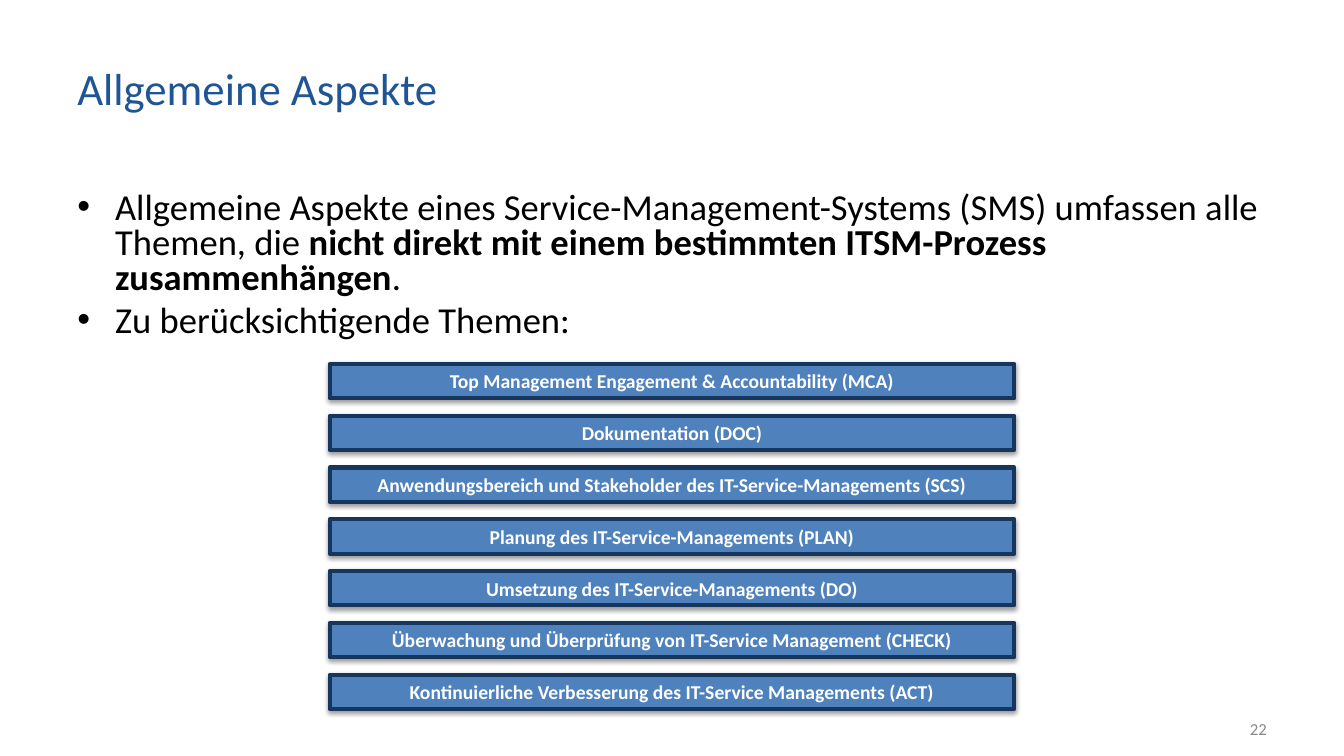
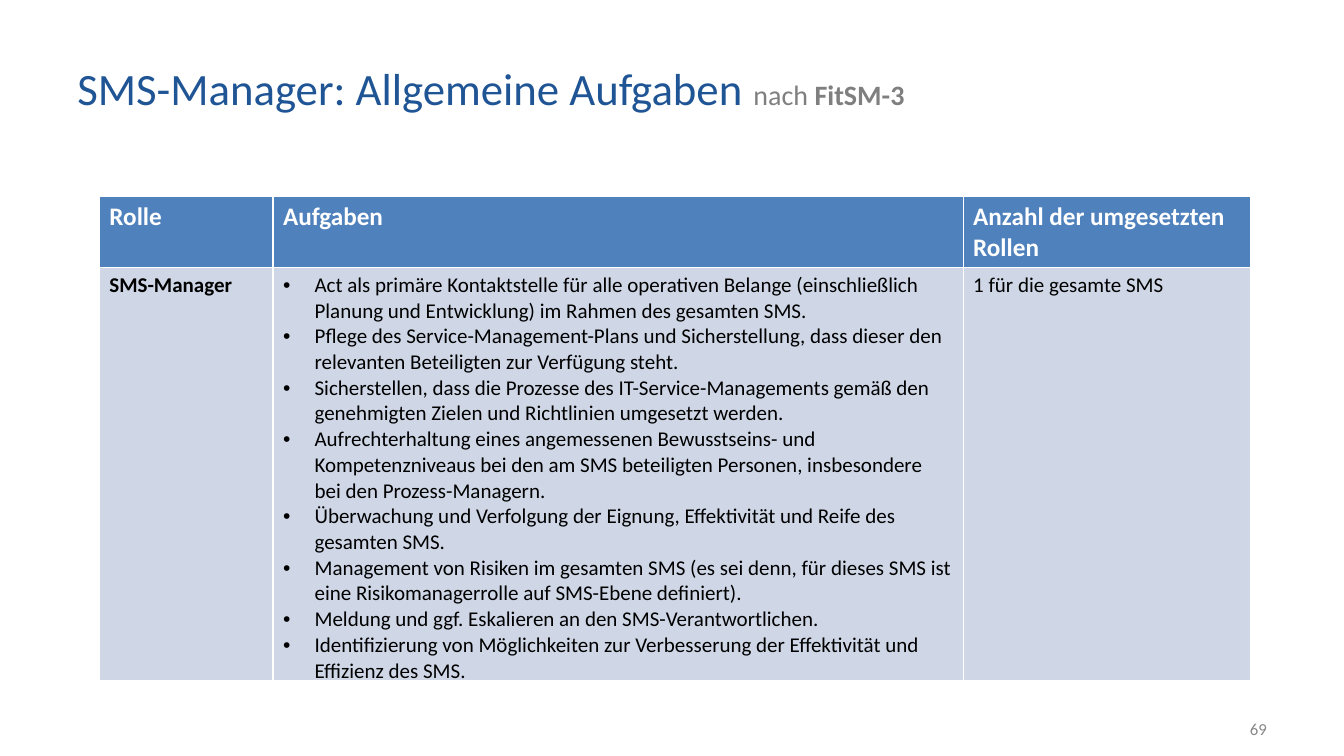
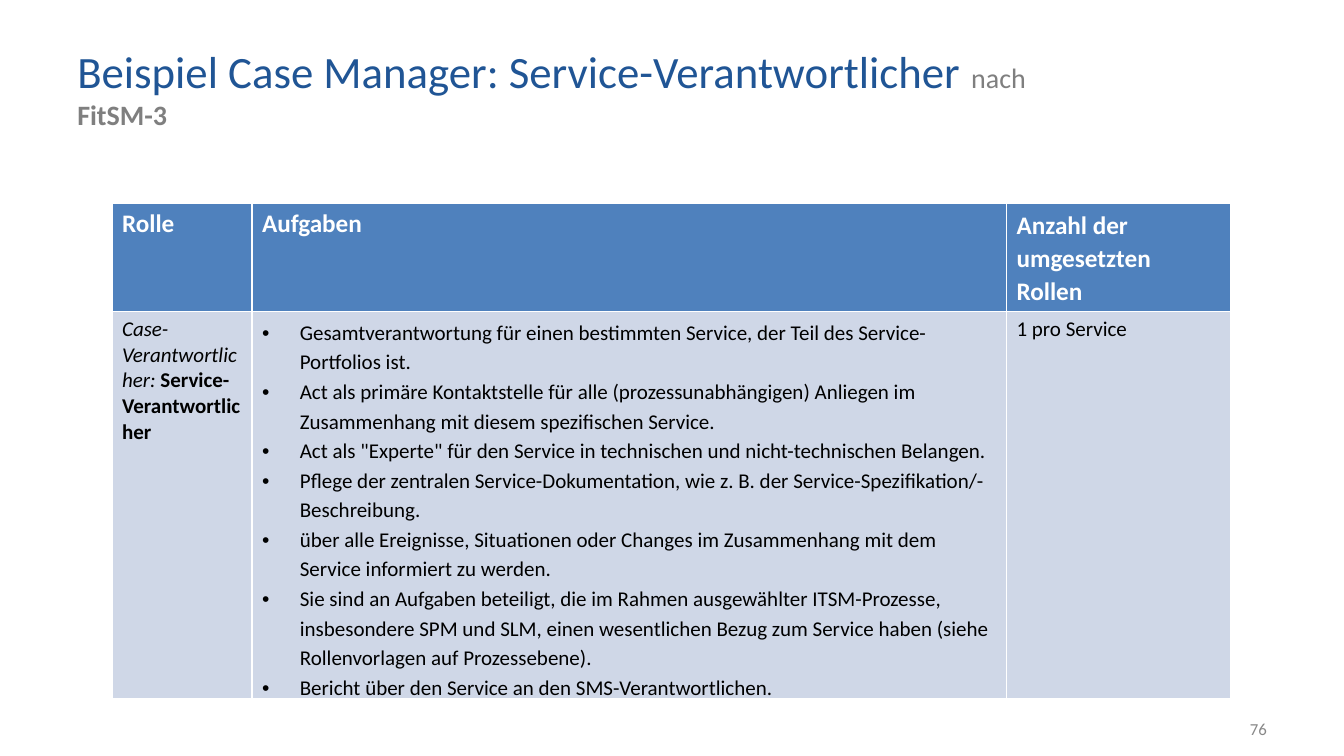
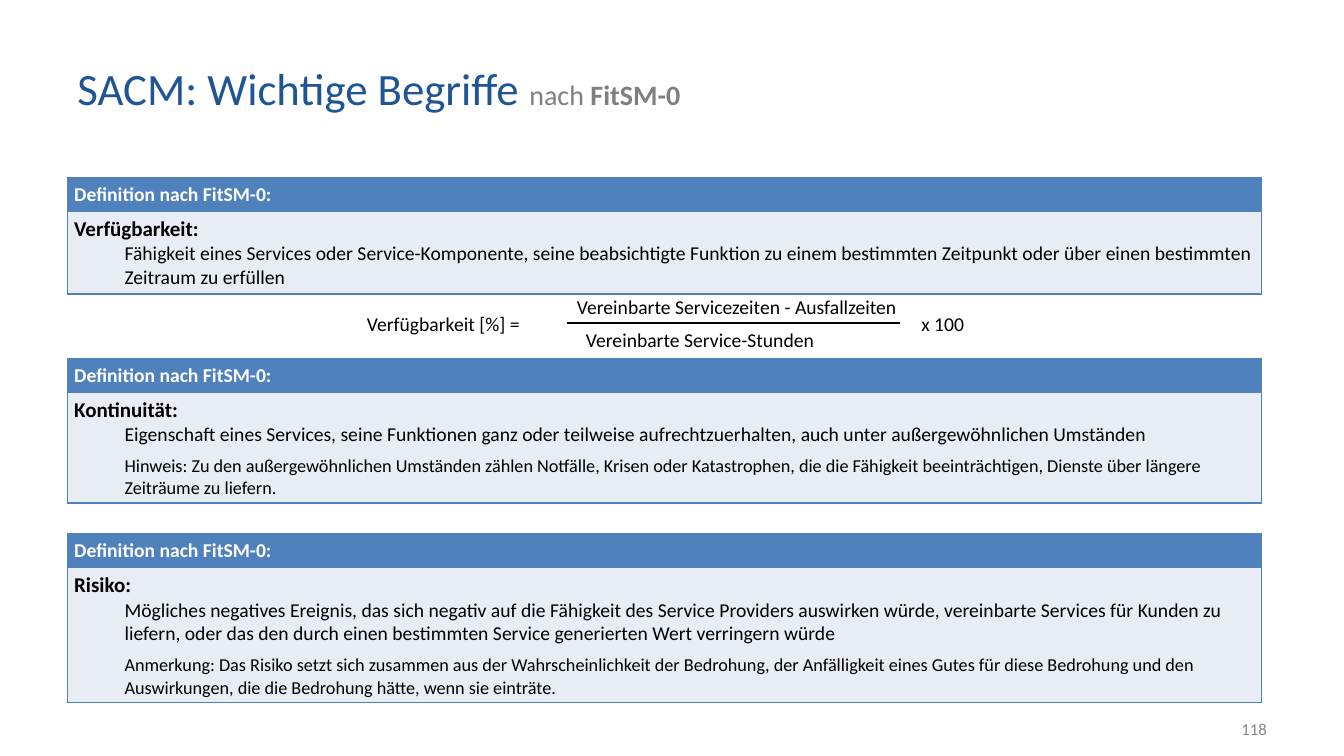
import pptx
import pptx.util
import pptx.dml.color
import pptx.enum.shapes
import pptx.enum.text
import pptx.oxml
import pptx.oxml.ns
from lxml import etree

Pt = pptx.util.Pt
ALIGN = pptx.enum.text.PP_ALIGN
ANCHOR = pptx.enum.text.MSO_ANCHOR

FONT = "Calibri"
HEX = {
    "title": "205595", "muted": "7F7F7F", "number": "888888",
    "blue": "4F81BD", "navy": "17365D", "cell": "CFD7E7",
    "pale": "E8ECF4", "white": "FFFFFF", "black": "000000",
}
TITLE = (48, 21.5, 713, 82)
NUMBER = (688, 506, 224, 28.5)


# Basic helpers
def rgb(name):
    return pptx.dml.color.RGBColor.from_string(HEX[name])


def place(shape, box):
    shape.left, shape.top, shape.width, shape.height = map(Pt, box)


def child(parent, tag, **attrs):
    node = etree.SubElement(parent, pptx.oxml.ns.qn(tag))
    for key, value in attrs.items():
        node.set(key, str(value))
    return node


def run(text, size, color="black", bold=False, italic=False):
    return text, size, color, bold, italic


def line(*runs, align=ALIGN.LEFT, hang=0, indent=0, lead=1, before=0, after=0):
    """Describe one paragraph; hang gives a bullet with a hanging indent."""
    return dict(runs=runs, align=align, hang=hang, indent=indent,
                lead=lead, before=before, after=after)


def write(frame, lines):
    frame.word_wrap = True
    for i, item in enumerate(lines):
        para = frame.paragraphs[0] if i == 0 else frame.add_paragraph()
        props = para._p.get_or_add_pPr()
        props.set("marL", str(Pt(item["hang"] or item["indent"])))
        props.set("indent", str(-Pt(item["hang"])))
        if item["hang"]:
            child(props, "a:buFont", typeface="Arial")
            child(props, "a:buChar", char="•")
        else:
            child(props, "a:buNone")
        para.alignment = item["align"]
        para.line_spacing = item["lead"]
        para.space_before = Pt(item["before"])
        para.space_after = Pt(item["after"])
        for text, size, color, bold, italic in item["runs"]:
            part = para.add_run()
            part.text = text
            font = part.font
            font.name, font.size = FONT, Pt(size)
            font.bold, font.italic = bold, italic
            font.color.rgb = rgb(color)


def label(slide, box, item, anchor=ANCHOR.TOP):
    shape = slide.shapes.add_textbox(*map(Pt, box))
    shape.text_frame.vertical_anchor = anchor
    write(shape.text_frame, [item])


# Parts that every slide shares
def start(deck, layout, title, number, source=None):
    slide = deck.slides.add_slide(deck.slide_layouts[layout])
    head = slide.shapes.title
    place(head, TITLE)
    frame = head.text_frame
    frame.auto_size = pptx.enum.text.MSO_AUTO_SIZE.NONE
    frame.vertical_anchor = ANCHOR.MIDDLE
    runs = [run(title, 32, "title")]
    if source:
        runs = [run(title + " ", 32, "title"), run("nach ", 20, "muted"),
                run(source, 20, "muted", True)]
    write(frame, [line(*runs)])
    label(slide, NUMBER, line(run(number, 12, "number"), align=ALIGN.RIGHT),
          ANCHOR.MIDDLE)
    return slide


def border(cell, color):
    props = cell._tc.get_or_add_tcPr()
    for side in ("a:lnL", "a:lnR", "a:lnT", "a:lnB"):
        edge = child(props, side, w=Pt(0.96))
        fill = child(edge, "a:solidFill")
        child(fill, "a:srgbClr", val=HEX[color])


def grid(slide, left, top, cols, rows, cells, body, edge, inset=7.2):
    """Place a table with a blue head row; each cell is a list of lines."""
    box = (left, top, sum(cols), sum(rows))
    table = slide.shapes.add_table(len(rows), len(cols), *map(Pt, box)).table
    table.horz_banding = False
    for col, width in zip(table.columns, cols):
        col.width = Pt(width)
    for r, (row, height) in enumerate(zip(table.rows, rows)):
        row.height = Pt(height)
        for cell, lines in zip(row.cells, cells[r]):
            border(cell, edge)
            cell.fill.solid()
            cell.fill.fore_color.rgb = rgb(body if r else "blue")
            cell.margin_left = cell.margin_right = Pt(inset)
            write(cell.text_frame, lines)


# Topic slide: stacked bars
def bars(slide, box, pitch, names):
    left, top, width, height = box
    for i, name in enumerate(names):
        bar = slide.shapes.add_shape(
            pptx.enum.shapes.MSO_SHAPE.RECTANGLE,
            *map(Pt, (left, top + i * pitch, width, height)))
        bar.fill.solid()
        bar.fill.fore_color.rgb = rgb("blue")
        bar.line.color.rgb = rgb("navy")
        bar.line.width = Pt(3)
        # Soft shadow straight below
        effects = child(bar._element.spPr, "a:effectLst")
        shade = child(effects, "a:outerShdw", blurRad=40000, dist=20000,
                      dir=5400000, rotWithShape=0)
        tint = child(shade, "a:srgbClr", val=HEX["black"])
        child(tint, "a:alpha", val=38000)
        bar.text_frame.vertical_anchor = ANCHOR.MIDDLE
        write(bar.text_frame,
              [line(run(name, 14, "white", True), align=ALIGN.CENTER)])


def topics(deck):
    slide = start(deck, 1, "Allgemeine Aspekte", "22")
    body = slide.placeholders[1]
    place(body, (48, 134, 864, 117))
    body.text_frame.auto_size = pptx.enum.text.MSO_AUTO_SIZE.NONE
    size = 26.1
    write(body.text_frame, [
        line(run("Allgemeine Aspekte eines Service-Management-Systems (SMS) "
                 "umfassen alle Themen, die ", size),
             run("nicht direkt mit einem bestimmten ITSM-Prozess "
                 "zusammenhängen", size, bold=True),
             run(".", size), hang=27, lead=0.8),
        line(run("Zu berücksichtigende Themen:", size),
             hang=27, lead=0.8, before=5.6),
    ])
    bars(slide, (235.5, 260, 489, 24.5), 37, [
        "Top Management Engagement & Accountability (MCA)",
        "Dokumentation (DOC)",
        "Anwendungsbereich und Stakeholder des IT-Service-Managements (SCS)",
        "Planung des IT-Service-Managements (PLAN)",
        "Umsetzung des IT-Service-Managements (DO)",
        "Überwachung und Überprüfung von IT-Service Management (CHECK)",
        "Kontinuierliche Verbesserung des IT-Service Managements (ACT)",
    ])


# Role slides: one role, its tasks and its count
def role(slide, left, top, cols, rows, name, tasks, count,
         hang, lead=1, wide=1):
    heads = [("Rolle", 1), ("Aufgaben", 1),
             ("Anzahl der umgesetzten Rollen", wide)]
    cells = [
        [[line(run(text, 18, "white", True), lead=gap)]
         for text, gap in heads],
        [[line(*name)],
         [line(run(task, 15), hang=hang, lead=lead) for task in tasks],
         [line(run(count, 15))]],
    ]
    grid(slide, left, top, cols, rows, cells, "cell", "white")


def manager(deck):
    slide = start(deck, 5, "SMS-Manager: Allgemeine Aufgaben", "69", "FitSM-3")
    tasks = [
        "Act als primäre Kontaktstelle für alle operativen Belange "
        "(einschließlich Planung und Entwicklung) im Rahmen des gesamten SMS.",
        "Pflege des Service-Management-Plans und Sicherstellung, dass dieser "
        "den relevanten Beteiligten zur Verfügung steht.",
        "Sicherstellen, dass die Prozesse des IT-Service-Managements gemäß "
        "den genehmigten Zielen und Richtlinien umgesetzt werden.",
        "Aufrechterhaltung eines angemessenen Bewusstseins- und "
        "Kompetenzniveaus bei den am SMS beteiligten Personen, insbesondere "
        "bei den Prozess-Managern.",
        "Überwachung und Verfolgung der Eignung, Effektivität und Reife des "
        "gesamten SMS.",
        "Management von Risiken im gesamten SMS (es sei denn, für dieses SMS "
        "ist eine Risikomanagerrolle auf SMS-Ebene definiert).",
        "Meldung und ggf. Eskalieren an den SMS-Verantwortlichen.",
        "Identifizierung von Möglichkeiten zur Verbesserung der Effektivität "
        "und Effizienz des SMS.",
    ]
    role(slide, 71, 140.5, (124, 493, 205), (50, 295),
         [run("SMS-Manager", 15, bold=True)], tasks,
         "1 für die gesamte SMS", 22.5)


def owner(deck):
    slide = start(deck, 5, "Beispiel Case Manager: Service-Verantwortlicher",
                  "76", "FitSM-3")
    tasks = [
        "Gesamtverantwortung für einen bestimmten Service, der Teil des "
        "Service-Portfolios ist.",
        "Act als primäre Kontaktstelle für alle (prozessunabhängigen) "
        "Anliegen im Zusammenhang mit diesem spezifischen Service.",
        "Act als \"Experte\" für den Service in technischen und "
        "nicht-technischen Belangen.",
        "Pflege der zentralen Service-Dokumentation, wie z. B. der "
        "Service-Spezifikation/-Beschreibung.",
        "über alle Ereignisse, Situationen oder Changes im Zusammenhang mit "
        "dem Service informiert zu werden.",
        "Sie sind an Aufgaben beteiligt, die im Rahmen ausgewählter "
        "ITSM-Prozesse, insbesondere SPM und SLM, einen wesentlichen Bezug "
        "zum Service haben (siehe Rollenvorlagen auf Prozessebene).",
        "Bericht über den Service an den SMS-Verantwortlichen.",
    ]
    name = [run("Case-Verantwortlicher: ", 15, italic=True),
            run("Service-Verantwortlicher", 15, bold=True)]
    role(slide, 80, 145.5, (100, 539, 160), (77, 273), name, tasks,
         "1 pro Service", 27, 1.15, 1.07)


# Terms slide: definition boxes and a formula
def define(slide, box, term, text, note=None):
    left, top, width, height = box
    head = 24
    lines = [line(run(term, 15, bold=True)),
             line(run(text, 14), indent=36, after=6 if note else 0)]
    if note:
        lines.append(line(run(note, 13), indent=36))
    title = [line(run("Definition nach FitSM-0:", 14, "white", True))]
    grid(slide, left, top, [width], [head, height - head],
         [[title], [lines]], "pale", "blue", 5)


def formula(slide, left, top):
    parts = [
        (0, 12, 142, "Verfügbarkeit [%] ="),
        (150, 0, 295, "Vereinbarte Servicezeiten - Ausfallzeiten"),
        (156.5, 23.5, 227, "Vereinbarte Service-Stunden"),
        (396, 12, 48, "x 100"),
    ]
    for x, y, width, text in parts:
        label(slide, (left + x, top + y, width, 24), line(run(text, 14)))
    # Fraction bar
    y = top + 23.5
    rule = slide.shapes.add_connector(
        pptx.enum.shapes.MSO_CONNECTOR.STRAIGHT,
        *map(Pt, (left + 150, y, left + 388, y)))
    rule.line.color.rgb = rgb("black")
    rule.line.width = Pt(1.5)
    child(rule._element.spPr, "a:effectLst")


def terms(deck):
    slide = start(deck, 5, "SACM: Wichtige Begriffe", "118", "FitSM-0")
    left, width = 48, 853
    define(slide, (left, 127, width, 83), "Verfügbarkeit:",
           "Fähigkeit eines Services oder Service-Komponente, seine "
           "beabsichtigte Funktion zu einem bestimmten Zeitpunkt oder über "
           "einen bestimmten Zeitraum zu erfüllen")
    formula(slide, 255, 207)
    define(slide, (left, 256, width, 103), "Kontinuität:",
           "Eigenschaft eines Services, seine Funktionen ganz oder teilweise "
           "aufrechtzuerhalten, auch unter außergewöhnlichen Umständen",
           "Hinweis: Zu den außergewöhnlichen Umständen zählen Notfälle, "
           "Krisen oder Katastrophen, die die Fähigkeit beeinträchtigen, "
           "Dienste über längere Zeiträume zu liefern.")
    define(slide, (left, 381.5, width, 120), "Risiko:",
           "Mögliches negatives Ereignis, das sich negativ auf die Fähigkeit "
           "des Service Providers auswirken würde, vereinbarte Services für "
           "Kunden zu liefern, oder das den durch einen bestimmten Service "
           "generierten Wert verringern würde",
           "Anmerkung: Das Risiko setzt sich zusammen aus der "
           "Wahrscheinlichkeit der Bedrohung, der Anfälligkeit eines Gutes "
           "für diese Bedrohung und den Auswirkungen, die die Bedrohung "
           "hätte, wenn sie einträte.")


def main():
    deck = pptx.Presentation()
    deck.slide_width, deck.slide_height = Pt(960), Pt(540)
    for build in (topics, manager, owner, terms):
        build(deck)
    deck.save("out.pptx")


if __name__ == "__main__":
    main()
